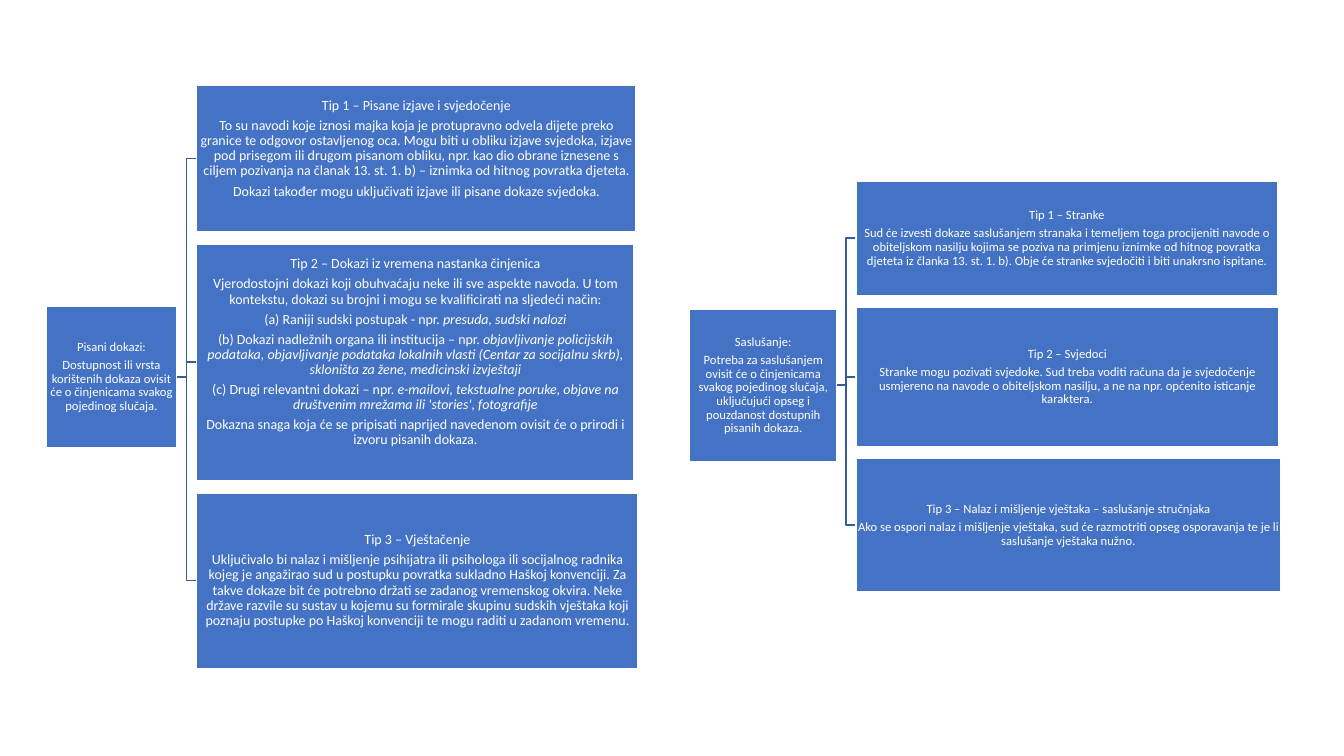
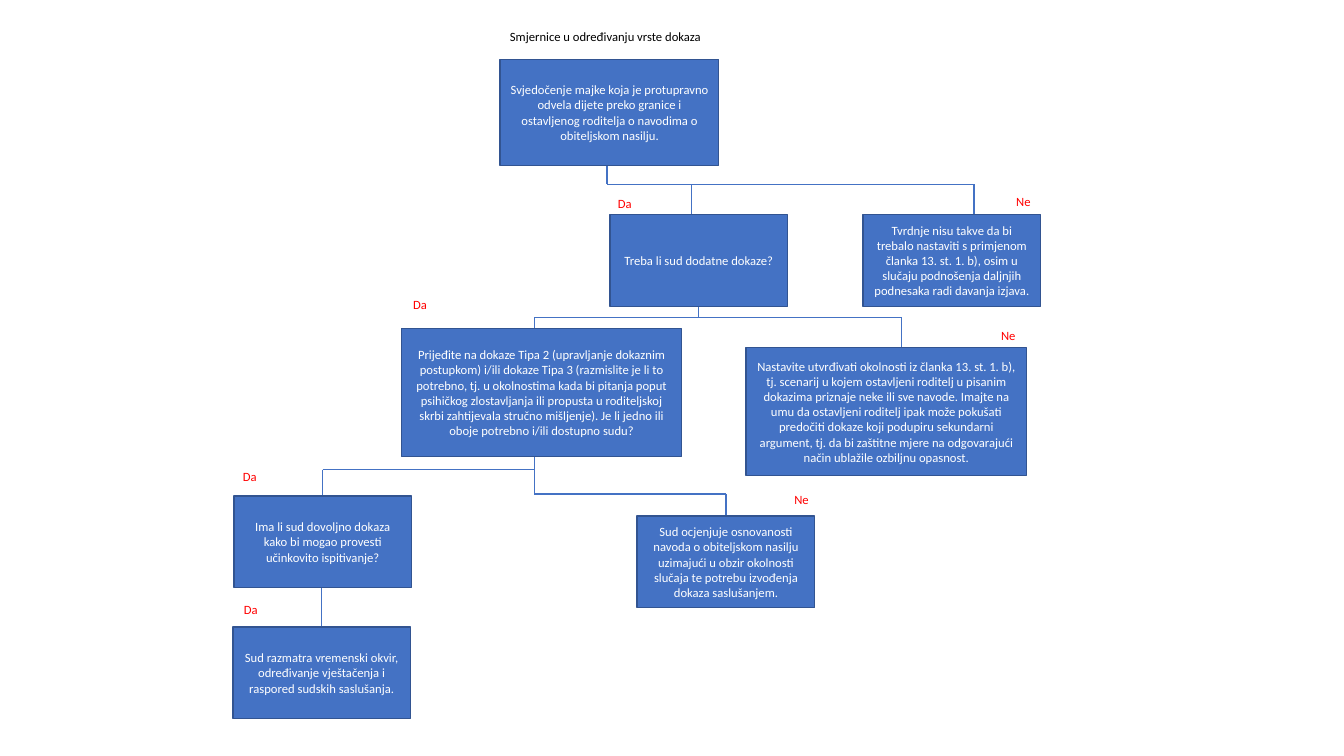
from pptx import Presentation
from pptx.dml.color import RGBColor
from pptx.enum.shapes import MSO_CONNECTOR, MSO_SHAPE
from pptx.enum.text import MSO_ANCHOR, PP_ALIGN
from pptx.oxml.ns import qn
from pptx.util import Pt
from lxml.etree import SubElement

PX = 9144  # one px is a hundredth of an inch
FONT = "Calibri"
BLUE, WHITE, BLACK, RED = "4472C4", "FFFFFF", "000000", "FF0000"
BOX_EDGE, BRACKET = "325491", "365B9D"
SMALL = 9

color = RGBColor.from_string


def set_text(frame, paragraphs, size, ink, align):
    """Each paragraph is a string, or a pair of plain and italic text."""
    for number, parts in enumerate(paragraphs):
        para = frame.paragraphs[0] if number == 0 else frame.add_paragraph()
        para.alignment = align
        para.font.name = FONT
        para.font.size = Pt(size)
        para.font.color.rgb = color(ink)
        plain, *italic = [parts] if isinstance(parts, str) else parts
        para.add_run().text = plain
        for text in italic:
            span = para.add_run()
            span.text = text
            span.font.italic = True


def add_box(page, area, paragraphs, size, edge):
    box = page.shapes.add_shape(MSO_SHAPE.RECTANGLE, *[n * PX for n in area])
    box.shadow.inherit = False
    box.fill.solid()
    box.fill.fore_color.rgb = color(BLUE)
    box.line.color.rgb = color(edge)
    box.line.width = Pt(1)
    box.text_frame.word_wrap = True
    box.text_frame.vertical_anchor = MSO_ANCHOR.MIDDLE
    set_text(box.text_frame, paragraphs, size, WHITE, PP_ALIGN.CENTER)
    return box


deck = Presentation()
deck.slide_width, deck.slide_height = 1333 * PX, 750 * PX
blank = deck.slide_layouts[6]

# Slide 1: two trees, each a root box with three stacked boxes
page = deck.slides.add_slide(blank)
STACK_GAP = 12

# Root area and text, then stack left, top and text size,
# then width, height, room left below the text and paragraphs of each box
trees = [
    ((46, 304, 129, 140),
     ["Pisani dokazi:",
      "Dostupnost ili vrsta korištenih dokaza ovisit će o činjenicama svakog pojedinog slučaja."],
     195, 85, 10,
     [(436, 145, 20,
       ["Tip 1 – Pisane izjave i svjedočenje",
        "To su navodi koje iznosi majka koja je protupravno odvela dijete preko granice te "
        "odgovor ostavljenog oca. Mogu biti u obliku izjave svjedoka, izjave pod prisegom ili "
        "drugom pisanom obliku, npr. kao dio obrane iznesene s ciljem pozivanja na članak 13. "
        "st. 1. b) – iznimka od hitnog povratka djeteta.",
        "Dokazi također mogu uključivati izjave ili pisane dokaze svjedoka."]),
      (434, 235, 20,
       ["Tip 2 – Dokazi iz vremena nastanka činjenica",
        "Vjerodostojni dokazi koji obuhvaćaju neke ili sve aspekte navoda. U tom kontekstu, "
        "dokazi su brojni i mogu se kvalificirati na sljedeći način:",
        ("(a) Raniji sudski postupak - npr. ", "presuda, sudski nalozi"),
        ("(b) Dokazi nadležnih organa ili institucija – npr. ",
         "objavljivanje policijskih podataka, objavljivanje podataka lokalnih vlasti (Centar za "
         "socijalnu skrb), skloništa za žene, medicinski izvještaji"),
        ("(c) Drugi relevantni dokazi – npr. ",
         "e-mailovi, tekstualne poruke, objave na društvenim mrežama ili 'stories', fotografije"),
        "Dokazna snaga koja će se pripisati naprijed navedenom ovisit će o prirodi i izvoru "
        "pisanih dokaza."]),
      (438, 174, 0,
       ["Tip 3 – Vještačenje",
        "Uključivalo bi nalaz i mišljenje psihijatra ili psihologa ili socijalnog radnika kojeg "
        "je angažirao sud u postupku povratka sukladno Haškoj konvenciji. Za takve dokaze bit "
        "će potrebno držati se zadanog vremenskog okvira. Neke države razvile su sustav u "
        "kojemu su formirale skupinu sudskih vještaka koji poznaju postupke po Haškoj "
        "konvenciji te mogu raditi u zadanom vremenu."])]),
    ((684, 307, 146, 151),
     ["Saslušanje:",
      "Potreba za saslušanjem ovisit će o činjenicama svakog pojedinog slučaja, uključujući "
      "opseg i pouzdanost dostupnih pisanih dokaza."],
     849, 180, SMALL,
     [(418, 113, 0,
       ["Tip 1 – Stranke",
        "Sud će izvesti dokaze saslušanjem stranaka i temeljem toga procijeniti navode o "
        "obiteljskom nasilju kojima se poziva na primjenu iznimke od hitnog povratka djeteta "
        "iz članka 13. st. 1. b). Obje će stranke svjedočiti i biti unakrsno ispitane."]),
      (419, 138, 0,
       ["Tip 2 – Svjedoci",
        "Stranke mogu pozivati svjedoke. Sud treba voditi računa da je svjedočenje usmjereno "
        "na navode o obiteljskom nasilju, a ne na npr. općenito isticanje karaktera."]),
      (421, 132, 0,
       ["Tip 3 – Nalaz i mišljenje vještaka – saslušanje stručnjaka",
        "Ako se ospori nalaz i mišljenje vještaka, sud će razmotriti opseg osporavanja te je "
        "li saslušanje vještaka nužno."])]),
]

for root, root_text, left, top, size, children in trees:
    boxes = [(root, root_text, SMALL, 0)]
    for width, height, room, paragraphs in children:
        boxes.append(((left, top, width, height), paragraphs, size, room))
        top += height + STACK_GAP

    # Brackets from the root to the middle of each stacked box
    start_x, start_y = root[0] + root[2], root[1] + root[3] // 2
    middle_x = (start_x + left) // 2
    for area, *rest in boxes[1:]:
        end_y = area[1] + area[3] // 2
        outline = page.shapes.build_freeform(start_x, start_y, scale=PX)
        outline.add_line_segments(
            [(middle_x, start_y), (middle_x, end_y), (left, end_y)], close=False)
        bracket = outline.convert_to_shape()
        bracket.shadow.inherit = False
        bracket.fill.background()
        bracket.line.color.rgb = color(BRACKET)
        bracket.line.width = Pt(1)

    # Boxes with tight margins and spaced paragraphs
    for area, paragraphs, text_size, room in boxes:
        frame = add_box(page, area, paragraphs, text_size, WHITE).text_frame
        frame.margin_left = frame.margin_right = frame.margin_top = Pt(0.5)
        frame.margin_bottom = Pt(0.5) + room * PX
        for para in frame.paragraphs:
            para.line_spacing = 0.9
            para.space_after = Pt(text_size * 0.35)

# Slide 2: decision tree
page = deck.slides.add_slide(blank)

# Lines between the steps
lines = [
    (602, 164, 602, 183), (602, 183, 966, 183), (686, 183, 686, 213), (966, 183, 966, 213),
    (693, 304, 693, 315), (530, 315, 895, 315), (530, 315, 530, 326), (894, 315, 894, 345),
    (530, 453, 530, 490), (320, 466, 530, 466), (320, 466, 320, 492),
    (530, 490, 720, 490), (720, 490, 720, 512), (319, 583, 319, 622),
]
for ends in lines:
    line = page.shapes.add_connector(MSO_CONNECTOR.STRAIGHT, *[n * PX for n in ends])
    line.line.color.rgb = color(BLUE)
    line.line.width = Pt(1)
    SubElement(line._element.spPr, qn("a:effectLst"))

# Steps, in three sizes
START, STEP, WIDE = (217, 105), (176, 91), (278, 127)
steps = [
    (496, 59, START,
     "Svjedočenje majke koja je protupravno odvela dijete preko granice i ostavljenog "
     "roditelja o navodima o obiteljskom nasilju."),
    (605, 213, STEP, "Treba li sud dodatne dokaze?"),
    (856, 213, STEP,
     "Tvrdnje nisu takve da bi trebalo nastaviti s primjenom članka 13. st. 1. b), osim u "
     "slučaju podnošenja daljnjih podnesaka radi davanja izjava."),
    (398, 326, WIDE,
     "Prijeđite na dokaze Tipa 2 (upravljanje dokaznim postupkom) i/ili dokaze Tipa 3 "
     "(razmislite je li to potrebno, tj. u okolnostima kada bi pitanja poput psihičkog "
     "zlostavljanja ili propusta u roditeljskoj skrbi zahtijevala stručno mišljenje). Je li "
     "jedno ili oboje potrebno i/ili dostupno sudu?"),
    (740, 345, WIDE,
     "Nastavite utvrđivati okolnosti iz članka 13. st. 1. b), tj. scenarij u kojem ostavljeni "
     "roditelj u pisanim dokazima priznaje neke ili sve navode. Imajte na umu da ostavljeni "
     "roditelj ipak može pokušati predočiti dokaze koji podupiru sekundarni argument, tj. da "
     "bi zaštitne mjere na odgovarajući način ublažile ozbiljnu opasnost."),
    (232, 492, STEP, "Ima li sud dovoljno dokaza kako bi mogao provesti učinkovito ispitivanje?"),
    (632, 512, STEP,
     "Sud ocjenjuje osnovanosti navoda o obiteljskom nasilju uzimajući u obzir okolnosti "
     "slučaja te potrebu izvođenja dokaza saslušanjem."),
    (231, 622, STEP,
     "Sud razmatra vremenski okvir, određivanje vještačenja i raspored sudskih saslušanja."),
]
for left, top, (width, height), text in steps:
    add_box(page, (left, top, width, height), [text], SMALL, BOX_EDGE)

# Title and answers
labels = [
    (496, 24, 213, "Smjernice u određivanju vrste dokaza", BLACK),
    (603, 189, 34, "Da", RED), (998, 187, 35, "Ne", RED),
    (400, 290, 34, "Da", RED), (983, 320, 35, "Ne", RED),
    (231, 460, 34, "Da", RED), (778, 483, 35, "Ne", RED),
    (232, 592, 34, "Da", RED),
]
for left, top, width, text, ink in labels:
    label = page.shapes.add_textbox(left * PX, top * PX, width * PX, 25 * PX)
    label.text_frame.word_wrap = False
    set_text(label.text_frame, [text], SMALL, ink, PP_ALIGN.LEFT)

deck.save("out.pptx")
